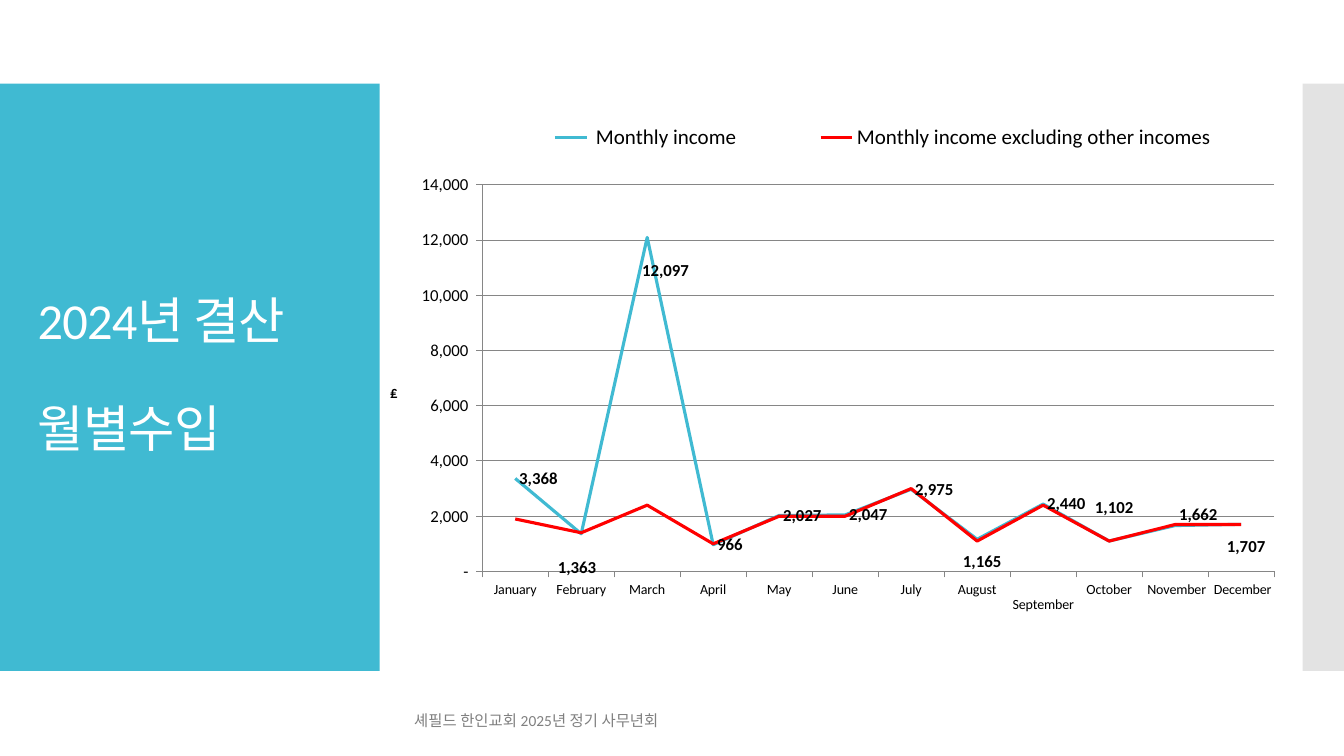
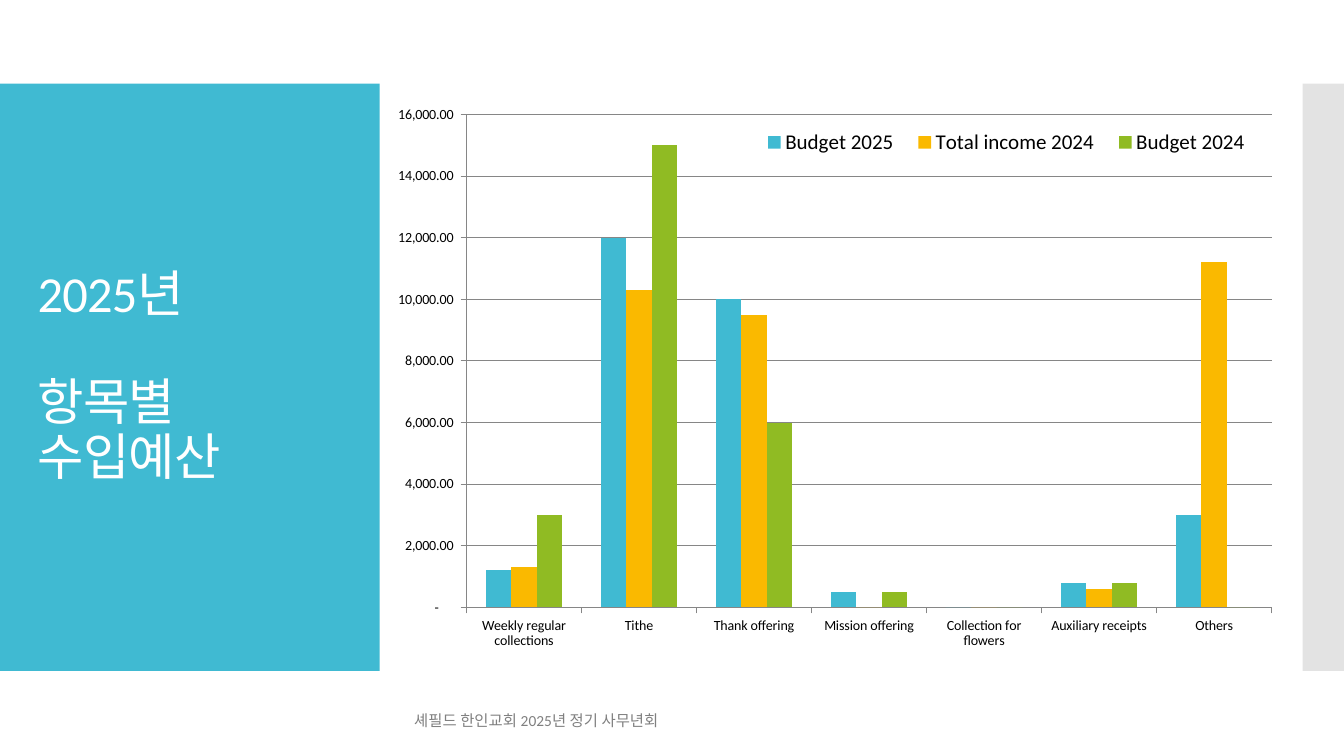
"""Two church finance slides: monthly income and the income budget by item."""
from dataclasses import dataclass

from lxml import etree
from pptx import Presentation, util as u
from pptx.chart import data as chart_data
from pptx.chart.chart import Chart
from pptx.dml.color import RGBColor
from pptx.enum import chart as ec, shapes, text
from pptx.oxml import ns
from pptx.slide import Slide

FONT = "Calibri"
TEAL, AMBER, GREEN, RED = "40BAD2", "FAB900", "90BB23", "FF0000"
BLACK, WHITE, GREY, RULE, EDGE = "000000", "FFFFFF", "808080", "868686", "C8C8C8"
FOOTER = "셰필드 한인교회 2025년 정기 사무년회"
MONTHS = ("January", "February", "March", "April", "May", "June", "July",
          "August", "September", "October", "November", "December")
C15 = "http://schemas.microsoft.com/office/drawing/2012/chart"
LABEL_EXTENSION = "{CE6537A1-D6FC-4f65-9D91-7224C49458BB}"


@dataclass(frozen=True)
class Box:
    """Position and size in centimetres, or as fractions of a chart."""
    left: float
    top: float
    width: float
    height: float

    def lengths(self) -> tuple[u.Cm, ...]:
        """Return the four values as lengths."""
        return tuple(u.Cm(v) for v in (self.left, self.top, self.width, self.height))


@dataclass(frozen=True)
class Series:
    """One named, coloured row of chart values."""
    name: str
    color: str
    values: tuple[float, ...]


@dataclass(frozen=True)
class ChartPlan:
    """Everything that differs between the two charts."""
    kind: ec.XL_CHART_TYPE
    box: Box
    plot: Box
    legend: Box
    categories: tuple[str, ...]
    series: tuple[Series, ...]
    axis_max: int
    axis_size: int
    axis_format: str


TITLE_BOX = Box(0.7, 3.12, 8.18, 12.78)
FOOTER_BOX = Box(10.19, 17.65, 16.99, 1.02)
TITLE_BAND = Box(0, 2.11, 9.57, 14.8)
EDGE_BAND = Box(32.83, 2.11, 1.04, 14.8)

MONTHLY = ChartPlan(
    ec.XL_CHART_TYPE.LINE,
    Box(9.63, 2.26, 22.94, 14.12),
    Box(0.11, 0.17, 0.87, 0.69),
    Box(0.11, 0.05, 0.88, 0.07),
    tuple(f" {month} " for month in MONTHS),
    (
        Series(" Monthly income ", TEAL,
               (3368, 1363, 12097, 966, 2027, 2047, 2975, 1165, 2440, 1102, 1662, 1707)),
        Series("Monthly income excluding other incomes", RED,
               (1900, 1400, 2400, 1000, 2000, 2000, 3000, 1100, 2400, 1100, 1700, 1700)),
    ),
    14000, 12, '_(* #,##0_);_(* \\(#,##0\\);_(* "-"_);_(@_)',
)
BUDGET = ChartPlan(
    ec.XL_CHART_TYPE.COLUMN_CLUSTERED,
    Box(9.68, 2.46, 23.06, 14.12),
    Box(0.09, 0.03, 0.88, 0.88),
    Box(0.4, 0.05, 0.56, 0.06),
    ("Weekly regular collections", "Tithe", "Thank offering", "Mission offering",
     "Collection for flowers", "Auxiliary receipts", "Others"),
    (
        Series("Budget 2025", TEAL, (1200, 12000, 10000, 500, 0, 800, 3000)),
        Series("Total income 2024", AMBER, (1300, 10300, 9500, 0, 0, 600, 11200)),
        Series("Budget 2024", GREEN, (3000, 15000, 6000, 500, 0, 800, 0)),
    ),
    16000, 10, '_(* #,##0.00_);_(* \\(#,##0.00\\);_(* "-"??_);_(@_)',
)
LABEL_SHIFTS = {1: (-0.03, 0.06), 2: (-0.01, 0.06), 7: (-0.02, 0.04),
                9: (-0.02, -0.06), 10: (0, -0.02), 11: (-0.02, 0.04)}


def rgb(color: str) -> RGBColor:
    """Turn a hex string into a colour."""
    return RGBColor.from_string(color)


def style_font(font, size: float, color: str, bold: bool = False) -> None:
    """Apply the deck's typeface with a size and colour."""
    font.name, font.size, font.bold = FONT, u.Pt(size), bold
    font.color.rgb = rgb(color)


def add_band(slide: Slide, box: Box, color: str, opacity: int = 100) -> None:
    """Draw a plain band, translucent when opacity is below 100."""
    band = slide.shapes.add_shape(shapes.MSO_SHAPE.RECTANGLE, *box.lengths())
    band.shadow.inherit = False
    band.line.fill.background()
    band.fill.solid()
    band.fill.fore_color.rgb = rgb(color)
    if opacity < 100:
        fill = band.element.spPr.find(f"{ns.qn('a:solidFill')}/{ns.qn('a:srgbClr')}")
        etree.SubElement(fill, ns.qn("a:alpha"), val=str(opacity * 1000))


def add_text(slide: Slide, box: Box, lines: tuple[str, ...], size: float, color: str) -> list:
    """Add vertically centred text and return its paragraphs."""
    frame = slide.shapes.add_textbox(*box.lengths()).text_frame
    frame.word_wrap = True
    frame.vertical_anchor = text.MSO_ANCHOR.MIDDLE
    for index, line in enumerate(lines):
        paragraph = frame.add_paragraph() if index else frame.paragraphs[0]
        paragraph.add_run().text = line
        style_font(paragraph.font, size, color)
    return list(frame.paragraphs)


def add_page(deck, title_lines: tuple[str, ...]) -> Slide:
    """Add a slide with the shared bands, title and footer."""
    slide = deck.slides.add_slide(deck.slide_layouts[6])
    add_band(slide, TITLE_BAND, TEAL)
    add_band(slide, EDGE_BAND, EDGE, 50)
    for index, paragraph in enumerate(add_text(slide, TITLE_BOX, title_lines, 36, WHITE)):
        paragraph.line_spacing = 0.9
        paragraph.space_before = u.Pt(38.5 if index else 0)
        paragraph.runs[0].font._element.set("spc", "-60")
    add_text(slide, FOOTER_BOX, (FOOTER,), 11, GREY)[0].space_after = u.Pt(6)
    return slide


def set_layout(parent, index: int, **settings) -> None:
    """Give a chart part a manual layout as its child at an index."""
    for old in parent.findall(ns.qn("c:layout")):
        parent.remove(old)
    layout = etree.Element(ns.qn("c:layout"))
    manual = etree.SubElement(layout, ns.qn("c:manualLayout"))
    for key, value in settings.items():
        etree.SubElement(manual, ns.qn(f"c:{key}"), val=str(value))
    parent.insert(index, layout)


def place_part(parent, index: int, box: Box, **target) -> None:
    """Place the plot or the legend at fractions of the chart."""
    set_layout(parent, index, **target, xMode="edge", yMode="edge",
               x=box.left, y=box.top, w=box.width, h=box.height)


def style_axes(chart: Chart, plan: ChartPlan) -> None:
    """Style both axes and the gridlines."""
    values, categories = chart.value_axis, chart.category_axis
    values.minimum_scale, values.maximum_scale, values.major_unit = 0, plan.axis_max, 2000
    values.has_major_gridlines = True
    values.tick_labels.number_format = plan.axis_format
    values.tick_labels.number_format_is_linked = False
    style_font(values.tick_labels.font, plan.axis_size, BLACK)
    style_font(categories.tick_labels.font, 10, BLACK)
    for axis in (values, categories):
        axis.major_tick_mark = ec.XL_TICK_MARK.OUTSIDE
        axis.minor_tick_mark = ec.XL_TICK_MARK.NONE
    for line in (values.format.line, categories.format.line, values.major_gridlines.format.line):
        line.color.rgb = rgb(RULE)
        line.width = u.Pt(0.75)


def add_chart(slide: Slide, plan: ChartPlan) -> Chart:
    """Draw a chart with its axes, legend and series colours."""
    table = chart_data.CategoryChartData(number_format="#,##0")
    table.categories = plan.categories
    for row in plan.series:
        table.add_series(row.name, row.values)
    chart = slide.shapes.add_chart(plan.kind, *plan.box.lengths(), table).chart
    chart.has_title = False
    style_font(chart.font, 10, BLACK)
    style_axes(chart, plan)
    chart.has_legend = True
    chart.legend.position = ec.XL_LEGEND_POSITION.RIGHT
    chart.legend.include_in_layout = False
    style_font(chart.legend.font, 15, BLACK)
    place_part(chart.element.xpath("c:chart/c:plotArea")[0], 0, plan.plot, layoutTarget="inner")
    place_part(chart.element.xpath("c:chart/c:legend")[0], 1, plan.legend)
    plot = chart.plots[0]
    plot.vary_by_categories = False
    for series, row in zip(plot.series, plan.series):
        if plan.kind == ec.XL_CHART_TYPE.LINE:
            series.smooth = False
            series.marker.style = ec.XL_MARKER_STYLE.NONE
            series.format.line.color.rgb = rgb(row.color)
            series.format.line.width = u.Pt(2.25)
        else:
            plot.gap_width, plot.overlap = 150, 0
            series.format.fill.solid()
            series.format.fill.fore_color.rgb = rgb(row.color)
    return chart


def hide_leader_lines(labels) -> None:
    """Stop moved labels from being tied to their points."""
    for setting in labels.findall(ns.qn("c:showLeaderLines")):
        setting.set("val", "0")
    extensions = etree.SubElement(labels, ns.qn("c:extLst"))
    extension = etree.SubElement(extensions, ns.qn("c:ext"), uri=LABEL_EXTENSION)
    etree.SubElement(extension, f"{{{C15}}}showLeaderLines", nsmap={"c15": C15}, val="0")


def label_income(chart: Chart) -> None:
    """Label the total income line, moving crowded labels aside."""
    income = chart.plots[0].series[0]
    labels = income.data_labels
    labels.show_value = True
    labels.number_format, labels.number_format_is_linked = "#,##0", False
    labels.position = ec.XL_LABEL_POSITION.RIGHT
    style_font(labels.font, 12, BLACK, True)
    for index, (x, y) in LABEL_SHIFTS.items():
        label = income.points[index].data_label
        label.position = ec.XL_LABEL_POSITION.RIGHT
        style_font(label.font, 12, BLACK, True)
        entry = chart.element.xpath(f'.//c:ser[1]/c:dLbls/c:dLbl[c:idx/@val="{index}"]')[0]
        set_layout(entry, 1, x=x, y=y)
    hide_leader_lines(chart.element.xpath(".//c:ser[1]/c:dLbls")[0])


def title_value_axis(chart: Chart, unit: str) -> None:
    """Name the value axis with an upright unit."""
    frame = chart.value_axis.axis_title.text_frame
    frame.text = unit
    style_font(frame.paragraphs[0].font, 10, BLACK, True)
    body = chart.element.xpath(".//c:valAx/c:title//a:bodyPr")[0]
    body.set("rot", "0")
    body.set("vert", "horz")


def main() -> None:
    """Build and save the deck."""
    deck = Presentation()
    deck.slide_width, deck.slide_height = u.Cm(33.87), u.Cm(19.05)
    monthly = add_chart(add_page(deck, ("2024년 결산", "월별수입")), MONTHLY)
    label_income(monthly)
    title_value_axis(monthly, "₤")
    add_chart(add_page(deck, ("2025년", "항목별 수입예산")), BUDGET)
    deck.save("out.pptx")


if __name__ == "__main__":
    main()
